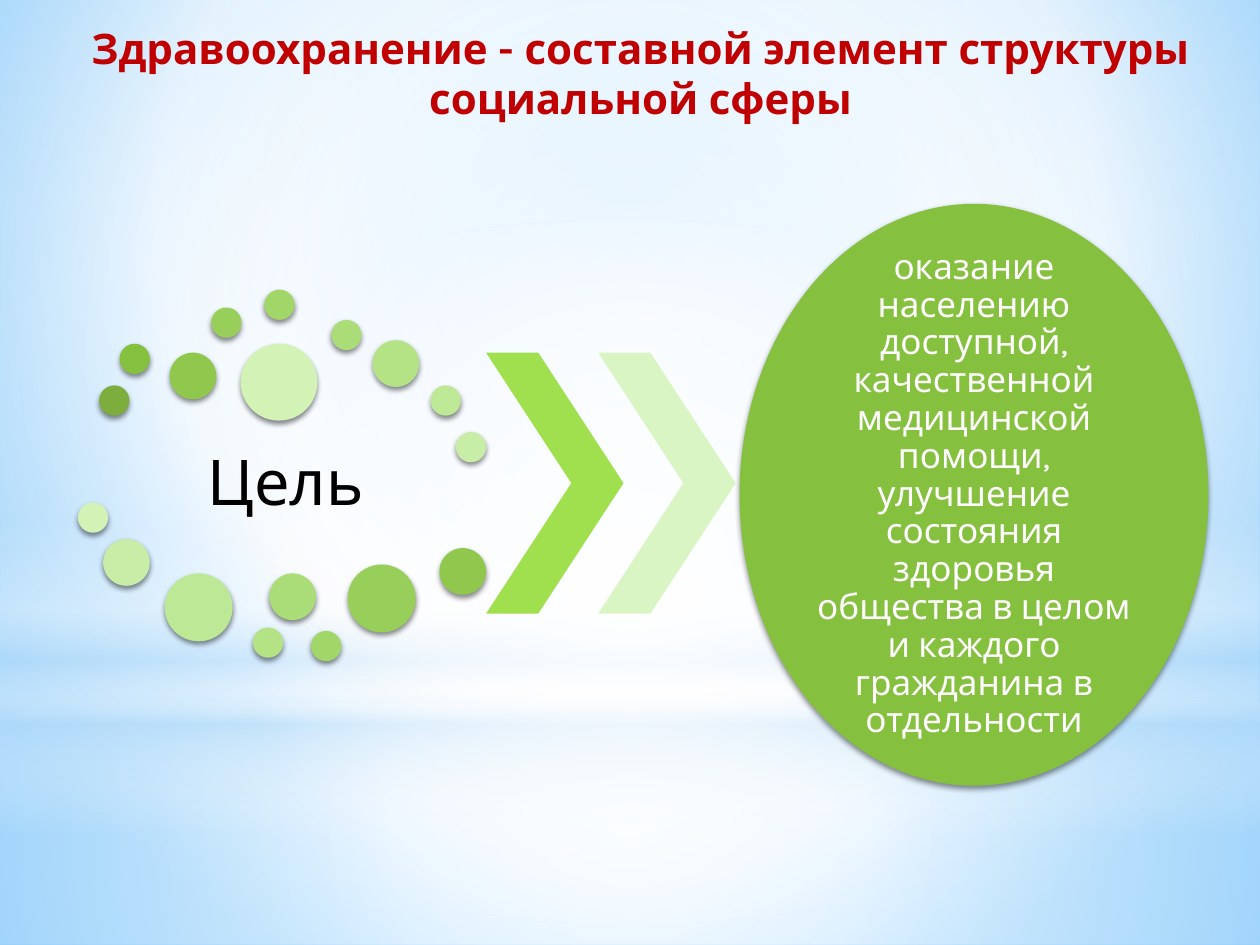
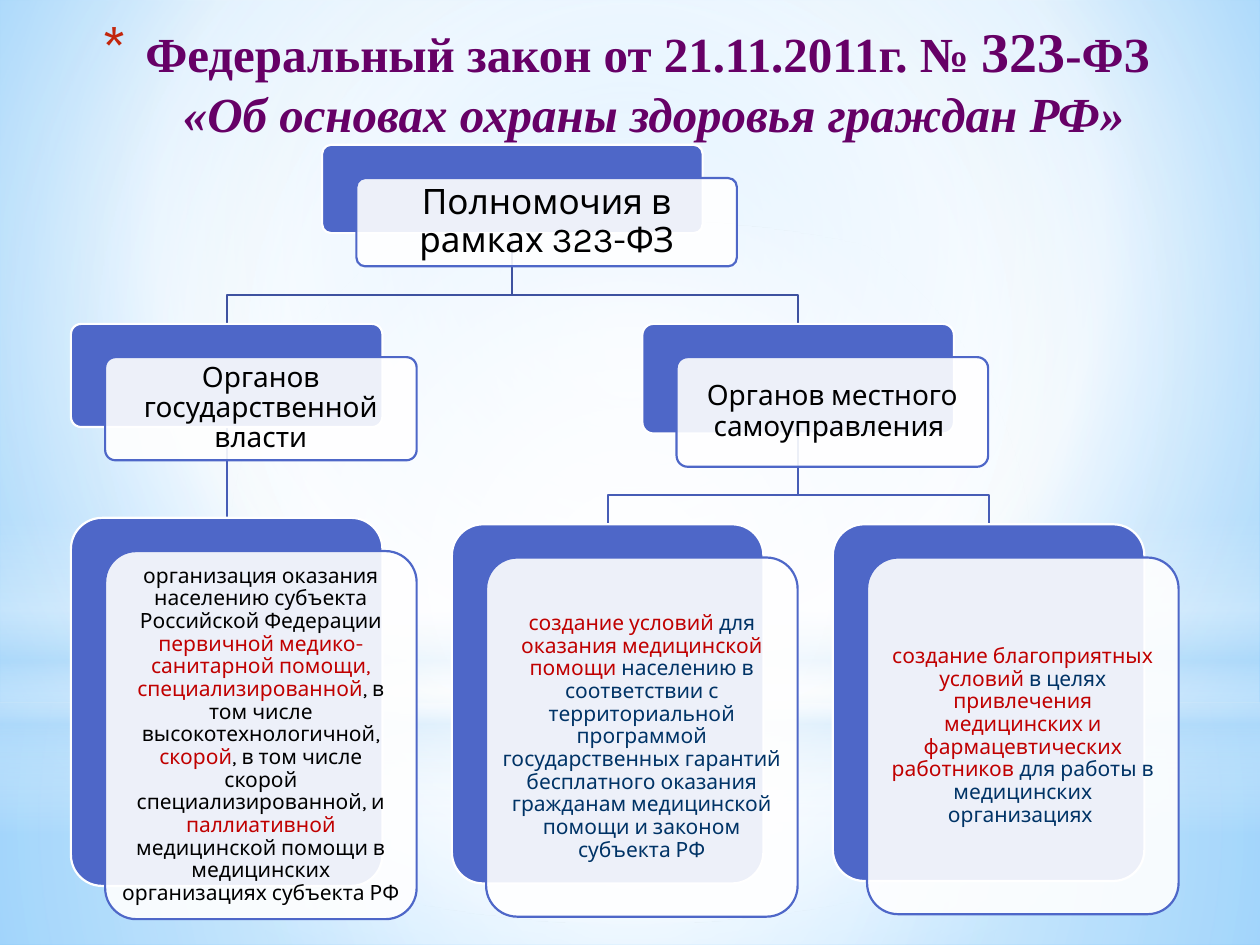
from lxml import etree
from pptx import Presentation
from pptx.dml.color import RGBColor
from pptx.enum.shapes import MSO_CONNECTOR, MSO_SHAPE
from pptx.enum.text import MSO_ANCHOR, PP_ALIGN
from pptx.oxml import parse_xml
from pptx.oxml.ns import nsdecls, qn
from pptx.util import Cm, Pt

COLORS = {
    "white": "FFFFFF", "black": "000000", "red": "C00000", "navy": "003366",
    "purple": "660066", "bullet": "C3260C", "haze": "B4DCFA",
    "sky": "9ED5FF", "deep_sky": "5BB9FF",
    "card": "4E67C8", "branch": "3E52A0", "twig": "475DB6",
    "goal": "86C03F", "arrow": "A0E04E", "pale_arrow": "D9F5C3",
}
RAMP = ["7CAD3D", "86C03F", "8FC84C", "98CF5A", "A1D668",
        "AADD77", "B4E386", "BDE896", "C7EDA6", "D2F2B6"]
SANS, SERIF = "Karla", "Times New Roman"
S, M, L, XL = 0.61, 0.94, 1.37, 1.55
RING_DOTS = [
    (0.43, 1.93, S), (0.84, 1.09, S), (1.85, 1.27, M), (2.69, 0.36, S),
    (3.76, 0, S), (5.11, 0.61, S), (5.94, 1.02, M), (7.11, 1.93, S),
    (7.62, 2.87, S), (3.28, 1.09, XL), (0, 4.29, S), (0.51, 5.03, M),
    (1.75, 5.72, L), (3.53, 6.81, S), (3.86, 5.72, M), (4.7, 6.88, S),
    (5.44, 5.54, L), (7.29, 5.21, M),
]
COLUMN_STEP, CARD_WIDTH, LEVEL_GAP, BEND = 7.68, 6.28, 1.83, 1.24
SHIFT_X, SHIFT_Y = 0.69, 0.67

POWERS = {
    "runs": [("Полномочия в рамках 323-ФЗ", "black")],
    "size": 20, "width": 7.67, "height": 1.78,
    "children": [
        {"runs": [("Органов государственной власти", "black")],
         "size": 16, "height": 2.08,
         "children": [
             {"size": 12, "height": 7.42, "runs": [
                 ("организация оказания населению субъекта Российской Федерации ", "black"),
                 ("первичной медико-санитарной помощи, специализированной", "red"),
                 (", в том числе высокотехнологичной, ", "black"),
                 ("скорой", "red"),
                 (", в том числе скорой специализированной, и ", "black"),
                 ("паллиативной ", "red"),
                 ("медицинской помощи в медицинских организациях субъекта РФ", "black")]},
         ]},
        {"runs": [("Органов местного самоуправления ", "black")],
         "size": 16, "height": 2.21,
         "children": [
             {"size": 12, "height": 7.24, "runs": [
                 ("создание условий ", "red"),
                 ("для ", "navy"),
                 ("оказания медицинской помощи ", "red"),
                 ("населению в соответствии с территориальной программой "
                  "государственных гарантий бесплатного оказания гражданам "
                  "медицинской помощи и законом субъекта РФ", "navy")]},
             {"size": 12, "height": 7.19, "runs": [
                 ("создание благоприятных условий ", "red"),
                 ("в целях ", "navy"),
                 ("привлечения медицинских и фармацевтических работников ", "red"),
                 ("для работы в медицинских организациях ", "navy")]},
         ]},
    ],
}


def rgb(color):
    return RGBColor.from_string(COLORS.get(color, color))


def add_figure(slide, kind, box, fill, line=None, alpha=None, shadow=False):
    sp = slide.shapes.add_shape(kind, *map(Cm, box))
    sp.shadow.inherit = False
    sp.fill.solid()
    sp.fill.fore_color.rgb = rgb(fill)
    if alpha:
        clr = sp.element.spPr.find(qn("a:solidFill"))[0]
        etree.SubElement(clr, qn("a:alpha"), val=str(alpha * 1000))
    if line:
        sp.line.color.rgb = rgb(line)
        sp.line.width = Pt(1.25)
    else:
        sp.line.fill.background()
    if shadow:
        sp.element.spPr.find(qn("a:effectLst")).append(parse_xml(
            f'<a:outerShdw {nsdecls("a")} blurRad="{Pt(3.1)}" dist="{Pt(1.8)}" '
            'dir="5400000" rotWithShape="0"><a:srgbClr val="000000">'
            '<a:alpha val="45000"/></a:srgbClr></a:outerShdw>'))
    return sp


def write(sp, runs, size, font=SANS, inset=None, spacing=None, anchor=MSO_ANCHOR.MIDDLE):
    tf = sp.text_frame
    tf.word_wrap = True
    tf.vertical_anchor = anchor
    if inset is not None:
        tf.margin_left = tf.margin_right = tf.margin_top = tf.margin_bottom = Cm(inset)
    p = tf.paragraphs[0]
    p.alignment = PP_ALIGN.CENTER
    p.font.name = font
    p.font.size = Pt(size)
    if spacing:
        p.line_spacing = spacing
    for text, color in runs:
        r = p.add_run()
        r.text = text
        r.font.color.rgb = rgb(color)
    return p


def set_gradient(parent, stops, direction):
    gs = "".join(
        f'<a:gs pos="{pos * 1000}"><a:srgbClr val="{COLORS[color]}">'
        f'<a:alpha val="{alpha * 1000}"/></a:srgbClr></a:gs>'
        for pos, color, alpha in stops)
    if direction == "down":
        course = '<a:lin ang="5400000" scaled="0"/>'
    else:
        sides = " ".join(f'{k}="{v * 1000}"' for k, v in zip("ltrb", direction))
        course = f'<a:path path="circle"><a:fillToRect {sides}/></a:path>'
    solid = parent.find(qn("a:solidFill"))
    parent.replace(solid, parse_xml(
        f'<a:gradFill {nsdecls("a")} rotWithShape="1"><a:gsLst>{gs}</a:gsLst>'
        f'{course}</a:gradFill>'))


def add_backdrop(layout, slide):
    layout.background.fill.solid()
    set_gradient(layout.element.find(".//" + qn("p:bgPr")),
                 [(0, "sky", 100), (60, "white", 100), (100, "deep_sky", 100)],
                 (20, 10, 20, 60))
    for ph in list(layout.placeholders):
        ph.element.getparent().remove(ph.element)
    center = (50, 50, 50, 50)
    rect, oval = MSO_SHAPE.RECTANGLE, MSO_SHAPE.OVAL
    layers = [
        (rect, 14.17, 4.88, center,
         [(0, "white", 91), (37, "white", 76), (100, "haze", 79)]),
        (rect, 0, 14.17, center,
         [(0, "white", 89), (48, "white", 62), (100, "haze", 79)]),
        (rect, 10.46, 6.35, "down",
         [(0, "white", 0), (29, "white", 30), (45, "haze", 40),
          (55, "white", 26), (65, "haze", 60), (100, "white", 0)]),
        (oval, 4.45, 14.17, center, [(0, "white", 100), (56, "white", 0)]),
    ]
    for kind, top, height, direction, stops in layers:
        sp = add_figure(slide, kind, (0, top, 25.4, height), "white")
        set_gradient(sp.element.spPr, stops, direction)
        layout.shapes.element.append(sp.element)


def add_title(slide, box, runs, size, font):
    sp = slide.shapes.add_textbox(*map(Cm, box))
    p = write(sp, runs, size, font, anchor=MSO_ANCHOR.TOP)
    p.font.bold = True
    return p


def add_dot_ring(slide, x, y):
    for (dx, dy, d), color in zip(RING_DOTS, RAMP + RAMP[::-1]):
        add_figure(slide, MSO_SHAPE.OVAL, (x + dx, y + dy, d, d), color, shadow=True)
    sp = slide.shapes.add_textbox(Cm(x + 0.43), Cm(y + 2.69), Cm(7.52), Cm(2.49))
    write(sp, [("Цель", "black")], 36, inset=0.13, spacing=0.9)


def add_chevrons(slide, x, y):
    for i, color in enumerate(("arrow", "pale_arrow")):
        sp = add_figure(slide, MSO_SHAPE.CHEVRON, (x + i * 2.26, y, 2.77, 5.26), color)
        sp.adjustments[0] = 0.62


def add_goal(slide, box):
    sp = add_figure(slide, MSO_SHAPE.OVAL, box, "goal", shadow=True)
    write(sp, [("оказание населению доступной, качественной медицинской помощи, "
                "улучшение состояния здоровья общества в целом и каждого "
                "гражданина в отдельности", "white")], 20, inset=0, spacing=0.9)


def add_card(slide, node, x, y, width):
    back, front = (
        add_figure(slide, MSO_SHAPE.ROUNDED_RECTANGLE,
                   (x + dx, y + dy, width, node["height"]), fill, line, alpha)
        for dx, dy, fill, line, alpha in (
            (0, 0, "card", "white", None),
            (SHIFT_X, SHIFT_Y, "white", "card", 90)))
    for sp in (back, front):
        sp.adjustments[0] = 0.1
    write(front, node["runs"], node["size"], inset=node["size"] / 85, spacing=0.9)
    return back


def add_link(slide, parent, child, color):
    x1, y1 = parent.left + parent.width // 2, parent.top + parent.height
    x2, y2 = child.left + child.width // 2, child.top
    if abs(x1 - x2) < Cm(0.05):
        sp = slide.shapes.add_connector(MSO_CONNECTOR.STRAIGHT, x1, y1, x2, y2)
        sp.begin_connect(parent, 2)
        sp.end_connect(child, 0)
        etree.SubElement(sp._element.spPr, qn("a:effectLst"))
    else:
        bend = y1 + Cm(BEND)
        fb = slide.shapes.build_freeform(x1, y1)
        fb.add_line_segments([(x1, bend), (x2, bend), (x2, y2)], close=False)
        sp = fb.convert_to_shape()
        sp.fill.background()
        sp.shadow.inherit = False
    sp.line.color.rgb = rgb(color)
    sp.line.width = Pt(1.25)
    slide.shapes.element.insert(2, sp._element)


def add_tree(slide, node, x, y, color="branch"):
    children, columns = [], 0
    for child in node.get("children", []):
        sp, used = add_tree(slide, child, x + columns * COLUMN_STEP,
                            y + node["height"] + LEVEL_GAP, "twig")
        children.append(sp)
        columns += used
    width = node.get("width", CARD_WIDTH)
    if children:
        middles = [sp.left + sp.width / 2 for sp in children]
        center = (middles[0] + middles[-1]) / 2 / Cm(1)
    else:
        center = x + CARD_WIDTH / 2
    card = add_card(slide, node, center - width / 2, y, width)
    for sp in children:
        add_link(slide, card, sp, color)
    return card, max(columns, 1)


def build_goal_slide(slide):
    add_dot_ring(slide, 1.57, 5.84)
    add_chevrons(slide, 9.8, 7.11)
    add_goal(slide, (14.91, 4.11, 9.45, 11.73))
    add_title(slide, (0.71, 0.33, 24.41, 2.31),
              [("Здравоохранение - составной элемент структуры социальной сферы", "red")],
              24, SANS)


def build_law_slide(slide):
    add_tree(slide, POWERS, 1.43, 2.92)
    p = add_title(slide, (1.3, 0.2, 22.86, 2.65),
                  [("Федеральный закон от 21.11.2011г. № ", "purple"),
                   ("323", "purple"), ("-ФЗ ", "purple")], 28, SERIF)
    p.runs[1].font.size = Pt(32)
    p.add_line_break()
    r = p.add_run()
    r.text = "«Об основах охраны здоровья граждан РФ»"
    r.font.italic = True
    r.font.color.rgb = rgb("purple")
    pPr = p._p.get_or_add_pPr()
    pPr.set("marL", str(Cm(0.89)))
    pPr.set("indent", str(Cm(-0.89)))
    bullet = parse_xml(
        f'<a:pPr {nsdecls("a")}><a:buClr><a:srgbClr val="{COLORS["bullet"]}"/></a:buClr>'
        '<a:buSzPct val="128000"/><a:buFont typeface="Karla"/><a:buChar char="*"/></a:pPr>')
    for i, part in enumerate(list(bullet)):
        pPr.insert(i, part)


def main():
    prs = Presentation()
    prs.slide_width, prs.slide_height = Cm(25.4), Cm(19.05)
    layout = prs.slide_layouts[6]
    goal_slide, law_slide = (prs.slides.add_slide(layout) for _ in range(2))
    add_backdrop(layout, goal_slide)
    build_goal_slide(goal_slide)
    build_law_slide(law_slide)
    prs.save("out.pptx")


if __name__ == "__main__":
    main()
